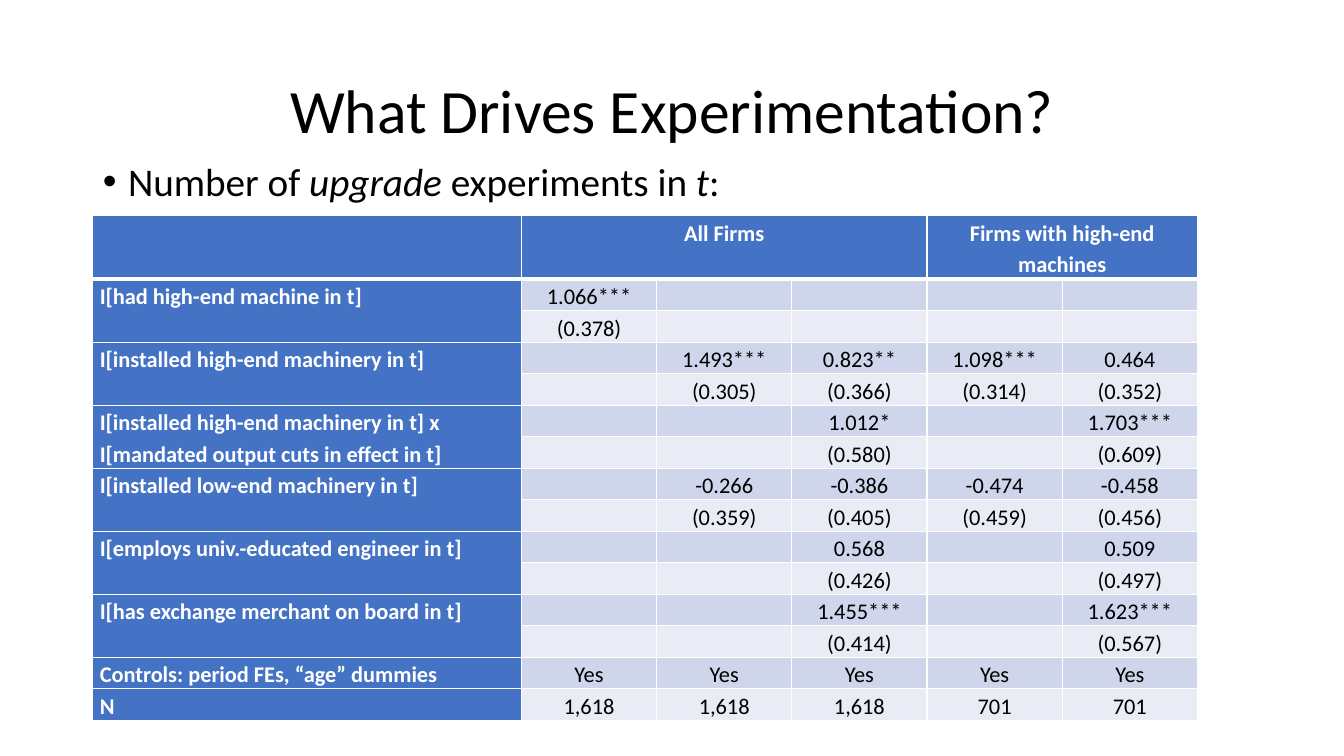
from dataclasses import dataclass

from lxml.etree import SubElement
from pptx import Presentation
from pptx.dml.color import RGBColor as Rgb
from pptx.enum.text import MSO_ANCHOR as Anchor, MSO_AUTO_SIZE as Fit, PP_ALIGN as Align
from pptx.oxml.ns import qn
from pptx.table import Table, _Cell as Cell
from pptx.text.text import TextFrame as Frame
from pptx.util import Emu, Inches, Pt

WIDE, HIGH = Inches(13.33), Inches(7.5)


@dataclass(frozen=True)
class Theme:
    face: str = "Calibri"
    ink: str = "000000"
    paper: str = "FFFFFF"
    head: str = "4472C4"
    dark: str = "CFD5EA"
    light: str = "E9EBF5"
    title: int = 44
    body: int = 28
    cell: int = 16
    thin: int = 1
    thick: int = 3


@dataclass(frozen=True)
class Box:
    left: float
    top: float
    width: float
    height: float

    def place(self) -> tuple[Emu, Emu, Emu, Emu]:
        return across(self.left), down(self.top), across(self.width), down(self.height)


@dataclass(frozen=True)
class Group:
    text: str
    first: int
    last: int


@dataclass(frozen=True)
class Item:
    label: str
    lines: tuple[tuple[str, ...], ...]


THEME = Theme()
TITLE = Box(6.9, 5.33, 86.25, 19.33)
BODY = Box(6.9, 20.8, 86.25, 7.6)
GRID = Box(6.9, 28.53, 82.2, 66.4)
LABEL, VALUE = 31.9, 10.06
HEAD, ROW = 8.4, 4.15

GROUPS = (Group("All Firms", 1, 3), Group("Firms with high-end machines", 4, 5))
ITEMS = (
    Item("I[had high-end machine in t]",
         (("1.066***", "", "", "", ""),
          ("(0.378)", "", "", "", ""))),
    Item("I[installed high-end machinery in t]",
         (("", "1.493***", "0.823**", "1.098***", "0.464"),
          ("", "(0.305)", "(0.366)", "(0.314)", "(0.352)"))),
    Item("I[installed high-end machinery in t] x I[mandated output cuts in effect in t]",
         (("", "", "1.012*", "", "1.703***"),
          ("", "", "(0.580)", "", "(0.609)"))),
    Item("I[installed low-end machinery in t]",
         (("", "-0.266", "-0.386", "-0.474", "-0.458"),
          ("", "(0.359)", "(0.405)", "(0.459)", "(0.456)"))),
    Item("I[employs univ.-educated engineer in t]",
         (("", "", "0.568", "", "0.509"),
          ("", "", "(0.426)", "", "(0.497)"))),
    Item("I[has exchange merchant on board in t]",
         (("", "", "1.455***", "", "1.623***"),
          ("", "", "(0.414)", "", "(0.567)"))),
    Item("Controls: period FEs, “age” dummies", (("Yes",) * 5,)),
    Item("N", (("1,618", "1,618", "1,618", "701", "701"),)),
)


def across(share: float) -> Emu:
    return Emu(round(WIDE * share / 100))


def down(share: float) -> Emu:
    return Emu(round(HIGH * share / 100))


def write(frame: Frame, text: str, *, size: int, color: str = THEME.ink,
          bold: bool = False, align: Align = Align.LEFT,
          space: float = 0.9, before: int = 0) -> None:
    para = frame.paragraphs[0]
    para.alignment = align
    para.line_spacing = space
    para.space_before = Pt(before)
    for at, part in enumerate(text.split("_")):
        run = para.add_run()
        run.text = part
        font = run.font
        font.name, font.size = THEME.face, Pt(size)
        font.bold, font.italic = bold, at % 2 == 1
        font.color.rgb = Rgb.from_string(color)


def settle(shape, box: Box, anchor: Anchor) -> Frame:
    shape.left, shape.top, shape.width, shape.height = box.place()
    frame = shape.text_frame
    frame.word_wrap = True
    frame.auto_size = Fit.NONE
    frame.vertical_anchor = anchor
    return frame


def bullet(frame: Frame) -> None:
    props = frame.paragraphs[0]._p.get_or_add_pPr()
    props.set("marL", str(Inches(0.25)))
    props.set("indent", str(-Inches(0.25)))
    SubElement(props, qn("a:buChar")).set("char", "•")


def border(cell: Cell, row: int) -> None:
    props = cell._tc.get_or_add_tcPr()
    widths = {"L": THEME.thin, "R": THEME.thin,
              "T": THEME.thick if row == 1 else THEME.thin,
              "B": THEME.thick if row == 0 else THEME.thin}
    for side, width in widths.items():
        line = SubElement(props, qn(f"a:ln{side}"))
        line.set("w", str(Pt(width)))
        fill = SubElement(line, qn("a:solidFill"))
        SubElement(fill, qn("a:srgbClr")).set("val", THEME.paper)


def style(cell: Cell, row: int, col: int) -> None:
    cell.margin_left = cell.margin_right = Inches(0.07)
    cell.margin_top = cell.margin_bottom = 0
    border(cell, row)
    band = THEME.dark if row % 2 else THEME.light
    cell.fill.solid()
    cell.fill.fore_color.rgb = Rgb.from_string(band if row and col else THEME.head)


def fill_head(table: Table) -> None:
    for group in GROUPS:
        cell = table.cell(0, group.first)
        cell.merge(table.cell(0, group.last))
        write(cell.text_frame, group.text, size=THEME.cell, color=THEME.paper,
              bold=True, align=Align.CENTER, space=1.15)


def fill_items(table: Table) -> None:
    row = 1
    for item in ITEMS:
        label = table.cell(row, 0)
        if len(item.lines) > 1:
            label.merge(table.cell(row + len(item.lines) - 1, 0))
        write(label.text_frame, item.label, size=THEME.cell, color=THEME.paper,
              bold=True, space=1.15)
        for line in item.lines:
            for col, value in enumerate(line, 1):
                cell = table.cell(row, col)
                cell.vertical_anchor = Anchor.MIDDLE
                if value:
                    write(cell.text_frame, value, size=THEME.cell,
                          align=Align.CENTER, space=1.15)
            row += 1


def add_grid(slide) -> None:
    count = 1 + sum(len(item.lines) for item in ITEMS)
    table = slide.shapes.add_table(count, 6, *GRID.place()).table
    table.first_col = True
    for at, col in enumerate(table.columns):
        col.width = across(VALUE if at else LABEL)
    for at, row in enumerate(table.rows):
        row.height = down(ROW if at else HEAD)
        for col, cell in enumerate(row.cells):
            style(cell, at, col)
    fill_head(table)
    fill_items(table)


def main() -> None:
    deck = Presentation()
    deck.slide_width, deck.slide_height = WIDE, HIGH
    slide = deck.slides.add_slide(deck.slide_layouts[1])
    title = settle(slide.shapes.title, TITLE, Anchor.MIDDLE)
    write(title, "What Drives Experimentation?", size=THEME.title, align=Align.CENTER)
    body = settle(slide.placeholders[1], BODY, Anchor.TOP)
    write(body, "Number of _upgrade_ experiments in _t_:", size=THEME.body, before=10)
    bullet(body)
    add_grid(slide)
    deck.save("out.pptx")


if __name__ == "__main__":
    main()
